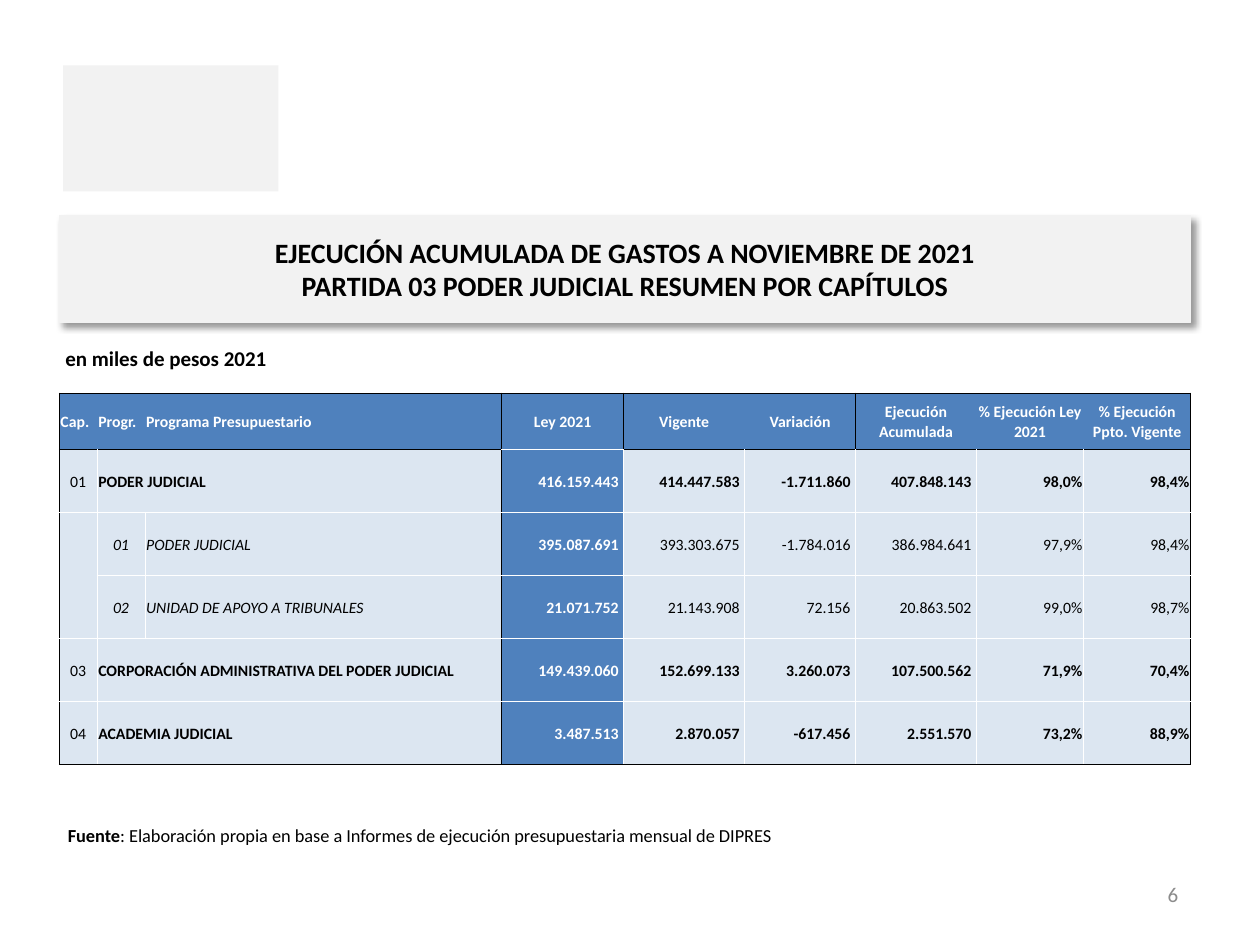
from pptx import Presentation
from pptx.dml.color import RGBColor
from pptx.enum.shapes import MSO_SHAPE as Shape
from pptx.enum.text import MSO_ANCHOR as Anchor, MSO_AUTO_SIZE as Fit, PP_ALIGN as Align
from pptx.oxml.ns import qn
from pptx.util import Inches, Pt
from lxml.etree import SubElement

COLORS = {"black": "000000", "white": "FFFFFF", "gray": "8C8C8C",
          "pale": "F2F2F2", "blue": "4F81BD", "light": "DCE6F1"}

WIDTHS = [0.3, 0.38, 2.83, 0.97, 0.96, 0.88, 0.96, 0.85, 0.85]
HEIGHTS = [0.45] + [0.5] * 5
LAW = 3          # column of the law budget
AMOUNTS = range(3, 7)
HEAD = ["Cap.", "Progr.", "Programa Presupuestario", "Ley 2021", "Vigente",
        "Variación", "Ejecución Acumulada", "% Ejecución Ley 2021",
        "% Ejecución Ppto. Vigente"]
ROWS = [
    ["01", "PODER JUDICIAL", "", "416.159.443", "414.447.583", "-1.711.860",
     "407.848.143", "98,0%", "98,4%"],
    ["", "01", "PODER JUDICIAL", "395.087.691", "393.303.675", "-1.784.016",
     "386.984.641", "97,9%", "98,4%"],
    ["", "02", "UNIDAD DE APOYO A TRIBUNALES", "21.071.752", "21.143.908",
     "72.156", "20.863.502", "99,0%", "98,7%"],
    ["03", "CORPORACIÓN ADMINISTRATIVA DEL PODER JUDICIAL", "", "149.439.060",
     "152.699.133", "3.260.073", "107.500.562", "71,9%", "70,4%"],
    ["04", "ACADEMIA JUDICIAL", "", "3.487.513", "2.870.057", "-617.456",
     "2.551.570", "73,2%", "88,9%"],
]


def rgb(name):
    return RGBColor.from_string(COLORS[name])


def style(font, size, color="black", bold=False, italic=False):
    font.name, font.size = "Calibri", Pt(size)
    font.bold, font.italic = bold, italic
    font.color.rgb = rgb(color)


def add_mark(slide, box):
    mark = slide.shapes.add_shape(Shape.RECTANGLE, *map(Inches, box))
    mark.shadow.inherit = False
    mark.fill.solid()
    mark.fill.fore_color.rgb = rgb("pale")
    mark.line.fill.background()


def add_title(slide, box, text):
    title = slide.shapes.title
    title.left, title.top, title.width, title.height = map(Inches, box)
    title.fill.solid()
    title.fill.fore_color.rgb = rgb("pale")
    title.line.color.rgb = rgb("pale")
    title.line.width = Pt(0.75)
    frame = title.text_frame
    frame.text = text
    frame.auto_size = Fit.NONE
    frame.vertical_anchor = Anchor.MIDDLE
    para = frame.paragraphs[0]
    para.alignment = Align.CENTER
    style(para.font, 16, bold=True)
    # Soft shadow to the lower right
    list_ = SubElement(title.element.spPr, qn("a:effectLst"))
    shade = SubElement(list_, qn("a:outerShdw"), blurRad=str(Pt(4)), dist=str(Pt(3)),
                       dir=str(45 * 60000), algn="tl", rotWithShape="0")
    tone = SubElement(shade, qn("a:srgbClr"), val=COLORS["black"])
    SubElement(tone, qn("a:alpha"), val="40000")


def add_text(slide, box, text, size, color="black", bold=False,
             align=Align.LEFT, anchor=Anchor.TOP):
    frame = slide.shapes.add_textbox(*map(Inches, box)).text_frame
    frame.word_wrap = True
    frame.vertical_anchor = anchor
    para = frame.paragraphs[0]
    para.text = text
    para.alignment = align
    style(para.font, size, color, bold)
    return para


def add_source(slide, box, label, text):
    para = add_text(slide, box, label, 10.5)
    para.runs[0].font.bold = True
    para.add_run().text = text


def find_edges(row, col):
    """Colour of each side of a cell; None leaves the side bare."""
    head, last = row == 0, row == len(ROWS)
    inner = None if head else "white"
    dark = {0, LAW, len(HEAD)} | ({LAW + 1, 6} if head else set())
    left, right = ("black" if side in dark else inner for side in (col, col + 1))
    top = "black" if head or (row == 1 and col != LAW) else "white"
    low = "black" if last or (head and col != LAW) else "white"
    if col == 0 and row == 2:
        low = None
    if col == 0 and row == 3:
        top = None
    return {"a:lnL": left, "a:lnR": right, "a:lnT": top, "a:lnB": low}


def draw_edges(cell, edges):
    props = cell._tc.get_or_add_tcPr()
    for tag, color in edges.items():
        line = SubElement(props, qn(tag), w=str(Pt(0.5)))
        if color:
            fill = SubElement(line, qn("a:solidFill"))
            SubElement(fill, qn("a:srgbClr"), val=COLORS[color])
        else:
            SubElement(line, qn("a:noFill"))


def fill_cell(cell, row, col, text):
    head, law = row == 0, col == LAW
    main = not head and bool(ROWS[row - 1][0])
    draw_edges(cell, find_edges(row, col))
    cell.fill.solid()
    cell.fill.fore_color.rgb = rgb("blue" if head or law else "light")
    cell.vertical_anchor = Anchor.MIDDLE
    cell.margin_left = cell.margin_top = cell.margin_right = Inches(0.01)
    cell.margin_bottom = 0
    if not head and col in AMOUNTS:
        cell.margin_right = Inches(0.04)
    para = cell.text_frame.paragraphs[0]
    para.text = text
    if col >= LAW:
        para.alignment = Align.CENTER if head else Align.RIGHT
    elif not head and (col == 0 or (col == 1 and not main)):
        para.alignment = Align.CENTER
    else:
        para.alignment = Align.LEFT
    style(para.font, 9, "white" if head or law else "black",
          bold=head or law or (main and col > 0),
          italic=not head and not main and col in (1, 2))


def add_grid(slide, box):
    grid = slide.shapes.add_table(len(HEIGHTS), len(WIDTHS), *map(Inches, box)).table
    grid.first_row = grid.horz_banding = False
    for col, width in zip(grid.columns, WIDTHS):
        col.width = Inches(width)
    for row, height in zip(grid.rows, HEIGHTS):
        row.height = Inches(height)
    for r, texts in enumerate([HEAD] + ROWS):
        for c, text in enumerate(texts):
            fill_cell(grid.cell(r, c), r, c, text)
        # Chapter names span the programme columns
        if r and texts[0]:
            grid.cell(r, 1).merge(grid.cell(r, 2))


def main():
    deck = Presentation()
    deck.slide_width, deck.slide_height = Inches(10), Inches(7.5)
    slide = deck.slides.add_slide(deck.slide_layouts[5])
    # Heading
    add_mark(slide, (0.5, 0.52, 1.71, 1.0))
    add_title(slide, (0.47, 1.71, 8.98, 0.85),
              "EJECUCIÓN ACUMULADA DE GASTOS A NOVIEMBRE DE 2021\v"
              "PARTIDA 03 PODER JUDICIAL RESUMEN POR CAPÍTULOS")
    # Page number, unit, source
    add_text(slide, (7.12, 6.9, 2.33, 0.4), "6", 12, "gray",
             align=Align.RIGHT, anchor=Anchor.MIDDLE)
    add_text(slide, (0.42, 2.69, 7.64, 0.31), "en miles de pesos 2021", 12, bold=True)
    add_source(slide, (0.44, 6.49, 7.96, 0.4), "Fuente",
               ": Elaboración propia en base a Informes de ejecución "
               "presupuestaria mensual de DIPRES")
    # Spending by chapter
    add_grid(slide, (0.47, 3.12, sum(WIDTHS), sum(HEIGHTS)))
    deck.save("out.pptx")


if __name__ == "__main__":
    main()
